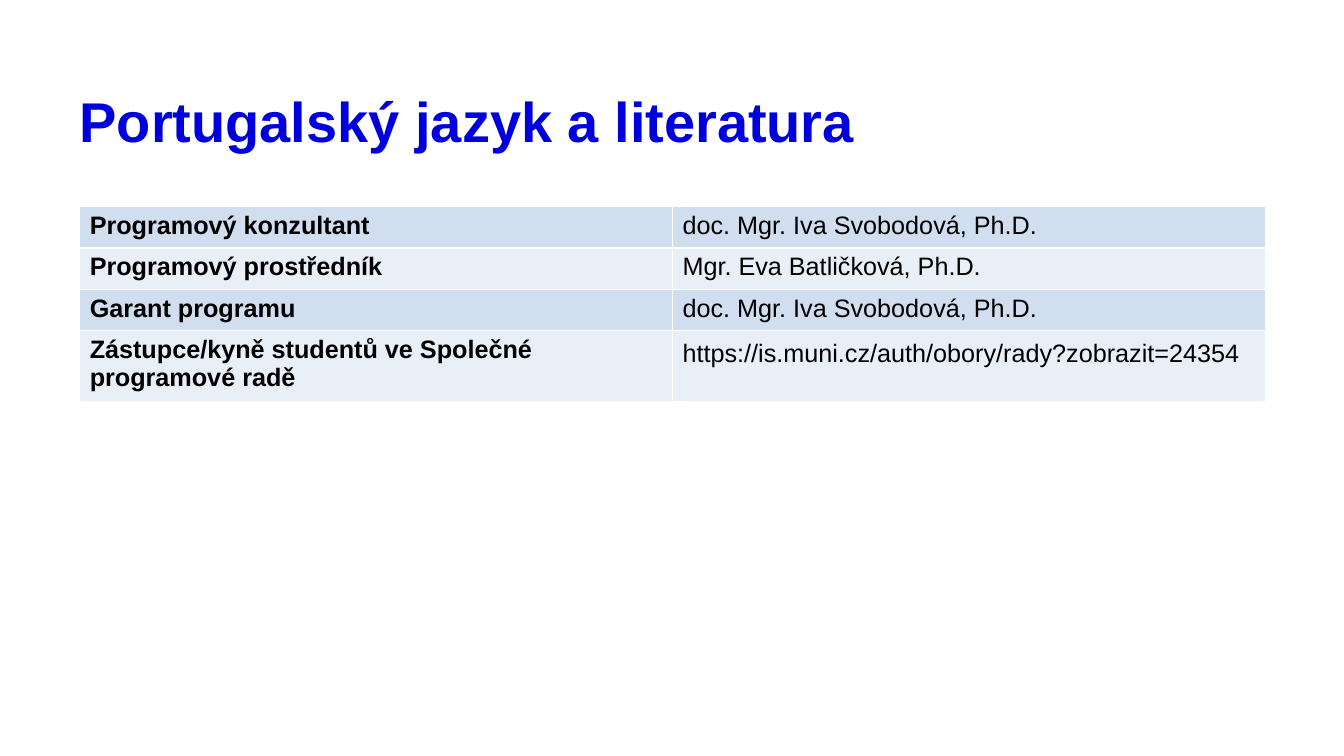
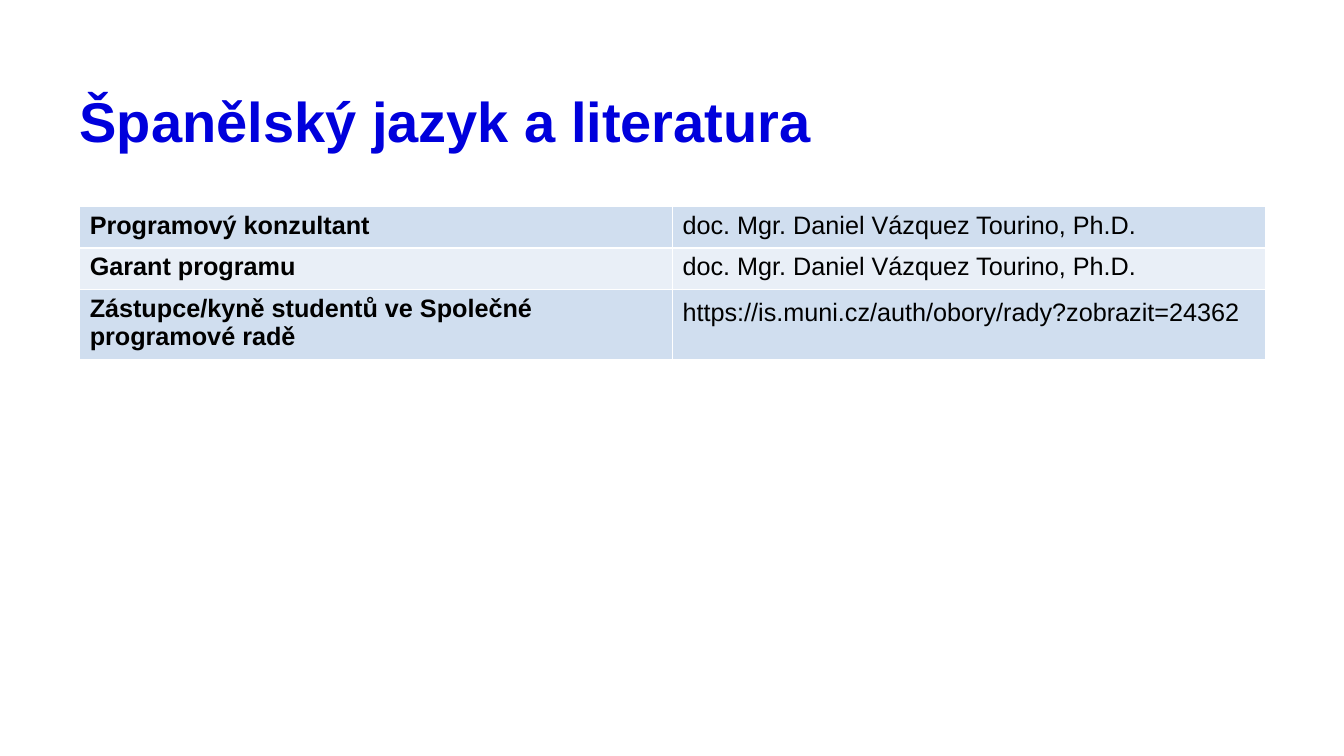
from lxml import etree
from pptx import Presentation
from pptx import util as u
from pptx.dml.color import RGBColor
from pptx.enum import text
from pptx.oxml.ns import qn

WIDTH, HEIGHT = u.Inches(13.33), u.Inches(7.5)
MARGIN = u.Inches(0.79)
CONTENT_WIDTH = u.Inches(11.76)
TITLE_HEIGHT = u.Inches(0.49)
TABLE_TOP = u.Inches(2.05)
ROW_HEIGHT = u.Inches(0.41)
COLUMNS = 2

BLUE = RGBColor(0x00, 0x00, 0xDC)
BLACK = RGBColor(0x00, 0x00, 0x00)
WHITE = RGBColor(0xFF, 0xFF, 0xFF)
BANDS = RGBColor(0xD0, 0xDE, 0xEF), RGBColor(0xE9, 0xEF, 0xF7)

TITLE_FONT = {"name": "Arial", "size": u.Pt(40), "bold": True}
LABEL_FONT = {"name": "Arial", "size": u.Pt(18), "bold": True}
VALUE_FONT = {**LABEL_FONT, "bold": False}
LINK_SPACING = {"line_spacing": 1.15, "space_after": u.Pt(12)}

CONSULTANT = "Programový konzultant"
MEDIATOR = "Programový prostředník"
GUARANTOR = "Garant programu"
STUDENT_DEPUTY = "Zástupce/kyně studentů ve Společné programové radě"
COUNCIL_URL = "https://is.muni.cz/auth/obory/rady?zobrazit="

PROGRAMMES = {
    "Portugalský jazyk a literatura": [
        (CONSULTANT, "doc. Mgr. Iva Svobodová, Ph.D."),
        (MEDIATOR, "Mgr. Eva Batličková, Ph.D."),
        (GUARANTOR, "doc. Mgr. Iva Svobodová, Ph.D."),
        (STUDENT_DEPUTY, COUNCIL_URL + "24354"),
    ],
    "Španělský jazyk a literatura": [
        (CONSULTANT, "doc. Mgr. Daniel Vázquez Tourino, Ph.D."),
        (GUARANTOR, "doc. Mgr. Daniel Vázquez Tourino, Ph.D."),
        (STUDENT_DEPUTY, COUNCIL_URL + "24362"),
    ],
}


def apply_format(target, values):
    for name, value in values.items():
        setattr(target, name, value)


def write(paragraph, content, font, colour):
    run = paragraph.add_run()
    run.text = content
    apply_format(run.font, font)
    run.font.color.rgb = colour


def add_title(slide, content):
    box = slide.shapes.add_textbox(MARGIN, MARGIN, CONTENT_WIDTH, TITLE_HEIGHT)
    frame = box.text_frame
    apply_format(frame, {
        "word_wrap": True, "vertical_anchor": text.MSO_ANCHOR.TOP,
        "margin_left": 0, "margin_right": 0, "margin_top": 0, "margin_bottom": 0,
    })
    paragraph = frame.paragraphs[0]
    paragraph.line_spacing = 1.1
    write(paragraph, content, TITLE_FONT, BLUE)


def add_borders(cell):
    """Draw all four cell borders; must precede the fill in the cell's XML."""
    properties = cell._tc.get_or_add_tcPr()
    for side in ("a:lnL", "a:lnR", "a:lnT", "a:lnB"):
        line = etree.SubElement(properties, qn(side), w=str(u.Pt(1)))
        fill = etree.SubElement(line, qn("a:solidFill"))
        etree.SubElement(fill, qn("a:srgbClr"), val=str(WHITE))


def fill_cell(cell, content, font, band):
    add_borders(cell)
    cell.fill.solid()
    cell.fill.fore_color.rgb = band
    paragraph = cell.text_frame.paragraphs[0]
    if content.startswith(COUNCIL_URL):
        apply_format(paragraph, LINK_SPACING)
    write(paragraph, content, font, BLACK)


def add_contacts(slide, rows):
    table = slide.shapes.add_table(
        len(rows), COLUMNS, MARGIN, TABLE_TOP, CONTENT_WIDTH, ROW_HEIGHT * len(rows)
    ).table
    table.first_row = False
    for index, row in enumerate(rows):
        band = BANDS[index % len(BANDS)]
        for column, (content, font) in enumerate(zip(row, (LABEL_FONT, VALUE_FONT))):
            fill_cell(table.cell(index, column), content, font, band)


def main():
    presentation = Presentation()
    presentation.slide_width, presentation.slide_height = WIDTH, HEIGHT
    blank = presentation.slide_layouts[6]
    for title, rows in PROGRAMMES.items():
        slide = presentation.slides.add_slide(blank)
        add_title(slide, title)
        add_contacts(slide, rows)
    presentation.save("out.pptx")


if __name__ == "__main__":
    main()
